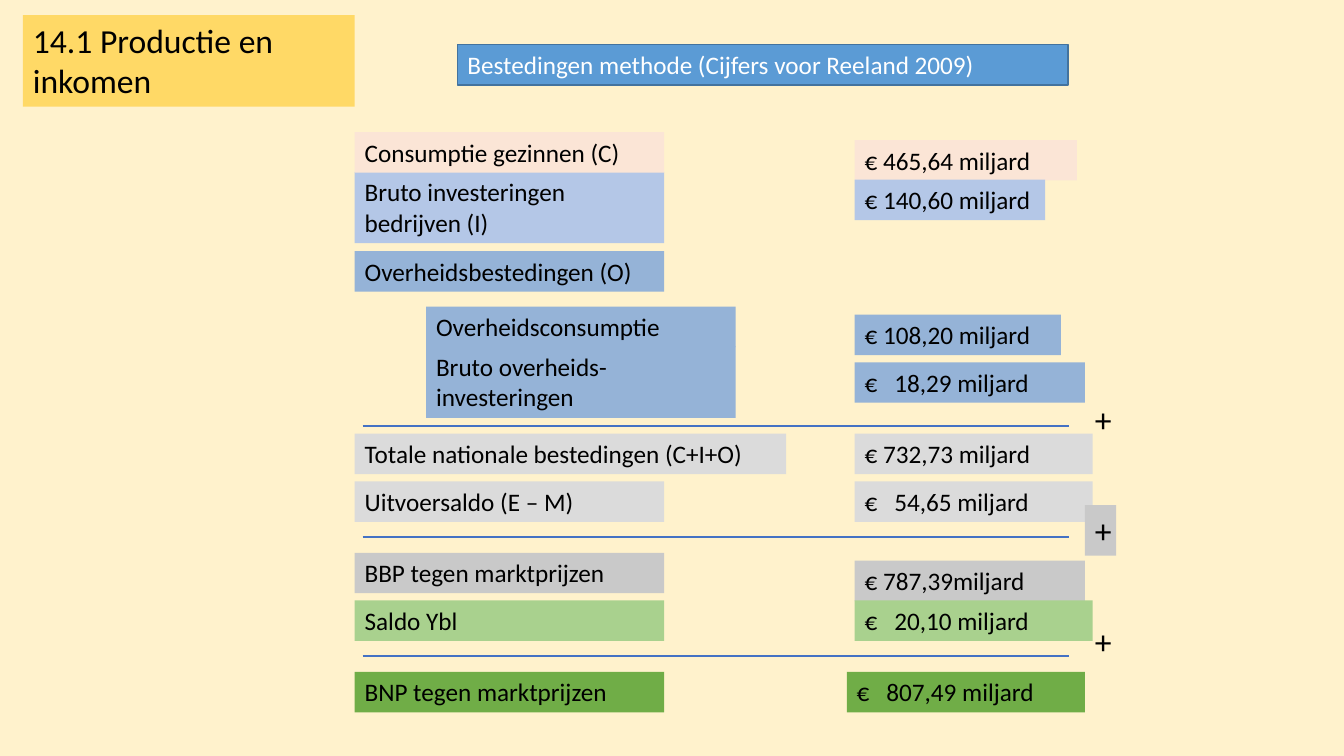
"""Builds the slide on the expenditure method of national income."""
from lxml.etree import SubElement
from pptx import Presentation
from pptx.dml.color import RGBColor
from pptx.enum.shapes import MSO_CONNECTOR, MSO_SHAPE
from pptx.enum.text import MSO_ANCHOR, MSO_AUTO_SIZE, PP_ALIGN
from pptx.oxml.ns import qn
from pptx.util import Cm, Pt

FONT = "Calibri"
BLACK = RGBColor(0x00, 0x00, 0x00)
WHITE = RGBColor(0xFF, 0xFF, 0xFF)
CREAM = RGBColor(0xFF, 0xF2, 0xCC)
YELLOW = RGBColor(0xFF, 0xD9, 0x66)
BLUE = RGBColor(0x5B, 0x9B, 0xD5)
DARK_BLUE = RGBColor(0x43, 0x73, 0x9E)
LINE_BLUE = RGBColor(0x44, 0x72, 0xC4)
PINK = RGBColor(0xFB, 0xE5, 0xD6)
PALE_BLUE = RGBColor(0xB4, 0xC7, 0xE7)
MID_BLUE = RGBColor(0x95, 0xB3, 0xD7)
LIGHT_GREY = RGBColor(0xDB, 0xDB, 0xDB)
GREY = RGBColor(0xC9, 0xC9, 0xC9)
LIGHT_GREEN = RGBColor(0xA9, 0xD1, 0x8E)
GREEN = RGBColor(0x70, 0xAD, 0x47)

ROW_H, TALL_H = 1.02, 1.8
LABEL_W, WIDE_W = 7.8, 10.87
INDENT = 1.8
VALUE_X = 12.6

LABELS = [
    ("Bruto investeringen bedrijven (I)", 0, 1.0, LABEL_W, TALL_H, PALE_BLUE),
    ("Consumptie gezinnen (C)", 0, 0, LABEL_W, ROW_H, PINK),
    ("Overheidsbestedingen (O)", 0, 3.0, LABEL_W, ROW_H, MID_BLUE),
    ("Overheidsconsumptie", INDENT, 4.4, LABEL_W, ROW_H, MID_BLUE),
    ("Bruto overheids- investeringen", INDENT, 5.4, LABEL_W, TALL_H, MID_BLUE),
    ("Totale nationale bestedingen (C+I+O)", 0, 7.6, WIDE_W, ROW_H, LIGHT_GREY),
    ("Uitvoersaldo (E – M)", 0, 8.8, LABEL_W, ROW_H, LIGHT_GREY),
    ("BBP tegen marktprijzen", 0, 10.6, LABEL_W, ROW_H, GREY),
    ("Saldo Ybl", 0, 11.8, LABEL_W, ROW_H, LIGHT_GREEN),
    ("BNP tegen marktprijzen", 0, 13.6, LABEL_W, ROW_H, GREEN),
]
VALUES = [
    ("€ 465,64 miljard", 0, 0.2, 5.6, ROW_H, PINK),
    ("€ 140,60 miljard", 0, 1.2, 4.8, ROW_H, PALE_BLUE),
    ("€ 108,20 miljard", 0, 4.6, 5.2, ROW_H, MID_BLUE),
    ("€\t18,29 miljard", 0, 5.8, 5.8, ROW_H, MID_BLUE),
    ("€ 732,73 miljard", 0, 7.6, 6.0, ROW_H, LIGHT_GREY),
    ("€\t54,65 miljard", 0, 8.8, 6.0, ROW_H, LIGHT_GREY),
    ("€ 787,39miljard", 0, 10.8, 5.8, ROW_H, GREY),
    ("€\t20,10 miljard", 0, 11.8, 6.0, ROW_H, LIGHT_GREEN),
    ("€\t807,49 miljard", -0.2, 13.6, 6.0, ROW_H, GREEN),
]
SUMS = [(7.4, 6.6, None), (10.2, 9.4, GREY), (13.2, 12.2, None)]


def add_box(s, text, x, y, w, h, fill=None, size=18, color=BLACK, line=None):
    """Add one left-aligned text block, filled when a fill is given."""
    box = Cm(x), Cm(y), Cm(w), Cm(h)
    if fill is None:
        sp = s.shapes.add_textbox(*box)
    else:
        sp = s.shapes.add_shape(MSO_SHAPE.RECTANGLE, *box)
        sp.shadow.inherit = False
        sp.fill.solid()
        sp.fill.fore_color.rgb = fill
        if line is None:
            sp.line.fill.background()
        else:
            sp.line.color.rgb = line
            sp.line.width = Pt(1)
    tf = sp.text_frame
    tf.word_wrap = True
    tf.auto_size = MSO_AUTO_SIZE.SHAPE_TO_FIT_TEXT
    tf.vertical_anchor = MSO_ANCHOR.TOP
    p = tf.paragraphs[0]
    p.alignment = PP_ALIGN.LEFT
    if "\t" in text:
        tabs = SubElement(p._p.get_or_add_pPr(), qn("a:tabLst"))
        SubElement(tabs, qn("a:tab"), pos=str(Cm(0.75)), algn="l")
    r = p.add_run()
    r.text = text
    r.font.name = FONT
    r.font.size = Pt(size)
    r.font.color.rgb = color


def add_headings(s, x, y):
    """Place the section title and the method heading to its right."""
    add_box(s, "14.1 Productie en inkomen", x, y, 8.36, 2.31, YELLOW, 24)
    add_box(s, "Bestedingen methode (Cijfers voor Reeland 2009)",
            x + 10.95, y + 0.74, 15.39, ROW_H, BLUE, color=WHITE, line=DARK_BLUE)


def add_column(s, rows, x, y):
    """Place a column of coloured entries relative to its top left corner."""
    for text, dx, dy, w, h, fill in rows:
        add_box(s, text, x + dx, y + dy, w, h, fill)


def add_sums(s, x, y):
    """Draw the sum lines and their plus signs."""
    for line_y, plus_y, fill in SUMS:
        c = s.shapes.add_connector(MSO_CONNECTOR.STRAIGHT, Cm(x + 0.2),
                                   Cm(y + line_y), Cm(x + 18), Cm(y + line_y))
        c.line.color.rgb = LINE_BLUE
        c.line.width = Pt(1.5)
        SubElement(c._element.spPr, qn("a:effectLst"))
        add_box(s, "+", x + 18.4, y + plus_y, 0.79, 1.27, fill, 24)


def add_calculation(s, x, y):
    """Place the labels, the amounts and the sum lines."""
    add_column(s, LABELS, x, y)
    add_column(s, VALUES, x + VALUE_X, y)
    add_sums(s, x, y)


def main():
    """Build and save the presentation."""
    prs = Presentation()
    prs.slide_width, prs.slide_height = Cm(33.87), Cm(19.05)
    s = prs.slides.add_slide(prs.slide_layouts[6])
    s.background.fill.solid()
    s.background.fill.fore_color.rgb = CREAM
    add_headings(s, 0.58, 0.38)
    add_calculation(s, 8.94, 3.33)
    prs.save("out.pptx")


if __name__ == "__main__":
    main()
